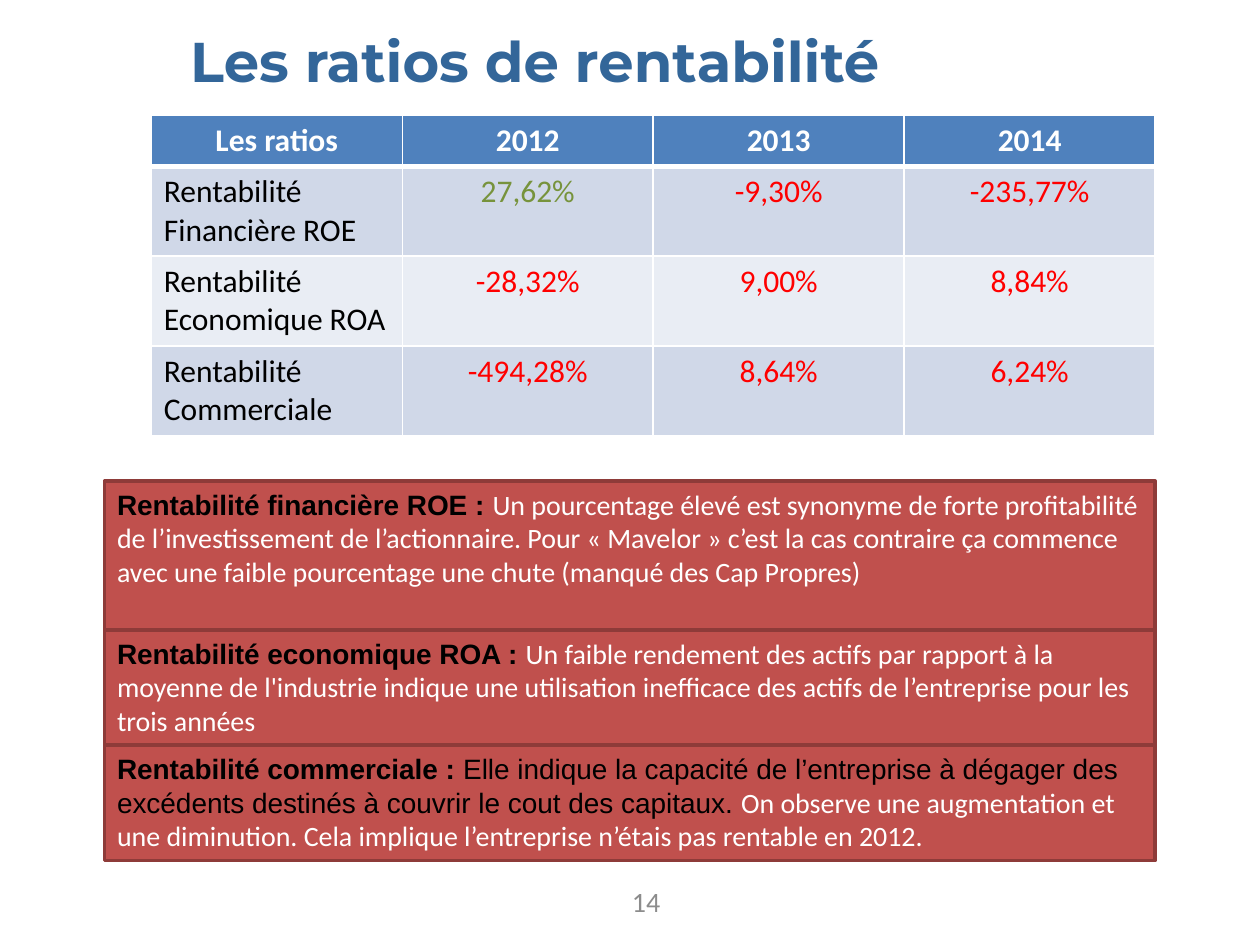
from lxml import etree
from pptx import Presentation
from pptx.dml.color import RGBColor
from pptx.enum.shapes import MSO_SHAPE as Shape
from pptx.enum.text import MSO_ANCHOR as Anchor, MSO_AUTO_SIZE as AutoSize, PP_ALIGN as Align
from pptx.oxml.ns import qn
from pptx.util import Cm, Pt

WHITE = RGBColor(0xFF, 0xFF, 0xFF)
BLACK = RGBColor(0x00, 0x00, 0x00)
TITLE_BLUE = RGBColor(0x33, 0x66, 0x99)
HEADER_BLUE = RGBColor(0x4F, 0x81, 0xBD)
BAND_DARK = RGBColor(0xD0, 0xD8, 0xE8)
BAND_LIGHT = RGBColor(0xE9, 0xED, 0xF4)
GREEN = RGBColor(0x77, 0x93, 0x3C)
RED = RGBColor(0xFF, 0x00, 0x00)
BRICK = RGBColor(0xC0, 0x50, 0x4D)
BRICK_DARK = RGBColor(0x8E, 0x3B, 0x39)
GREY = RGBColor(0x8C, 0x8C, 0x8C)


def write(frame, text, font="Calibri", size=16, color=WHITE, bold=False, align=Align.LEFT):
    """Append a formatted run to the first paragraph of a text frame."""
    paragraph = frame.paragraphs[0]
    paragraph.alignment = align
    run = paragraph.add_run()
    run.text = text
    run.font.name = font
    run.font.size = Pt(size)
    run.font.bold = bold
    run.font.color.rgb = color


def add_borders(cell, widths):
    """Draw white cell borders; widths maps a border tag to its points."""
    properties = cell._tc.get_or_add_tcPr()
    for position, (tag, width) in enumerate(widths.items()):
        border = etree.Element(qn(tag), w=str(Pt(width)))
        fill = etree.SubElement(border, qn("a:solidFill"))
        etree.SubElement(fill, qn("a:srgbClr"), val=str(WHITE))
        properties.insert(position, border)


prs = Presentation()
prs.slide_width, prs.slide_height = Cm(25.4), Cm(19.05)
slide = prs.slides.add_slide(prs.slide_layouts[5])

# Title
title = slide.shapes.title
title.left, title.top, title.width, title.height = Cm(3.58), Cm(0.41), Cm(21.79), Cm(1.63)
title.text_frame.auto_size = AutoSize.NONE
title.text_frame.vertical_anchor = Anchor.TOP
write(title.text_frame, "Les ratios de rentabilité", font="Montserrat", size=32,
      color=TITLE_BLUE, bold=True)

# Ratios by year; rows grow to fit their text
ratios = [
    ("Les ratios", "2012", "2013", "2014"),
    ("Rentabilité Financière ROE", "27,62%", "-9,30%", "-235,77%"),
    ("Rentabilité Economique ROA", "-28,32%", "9,00%", "8,84%"),
    ("Rentabilité Commerciale", "-494,28%", "8,64%", "6,24%"),
]
ratio_table = slide.shapes.add_table(4, 4, Cm(3.05), Cm(2.33), Cm(20.24), Cm(4.12)).table
for r, values in enumerate(ratios):
    for c, value in enumerate(values):
        cell = ratio_table.cell(r, c)
        cell.fill.solid()
        if r == 0:
            cell.fill.fore_color.rgb = HEADER_BLUE
            color = WHITE
        else:
            cell.fill.fore_color.rgb = BAND_DARK if r % 2 else BAND_LIGHT
            color = BLACK if c == 0 else GREEN if (r, c) == (1, 1) else RED
        add_borders(cell, {"a:lnL": 1, "a:lnR": 1, "a:lnT": 3 if r == 1 else 1,
                           "a:lnB": 3 if r == 0 else 1})
        write(cell.text_frame, value, size=18, color=color, bold=r == 0,
              align=Align.LEFT if r and c == 0 else Align.CENTER)

# Comments: heading, definition in black, remark in white
comments = [
    (9.7, 3.0, "Rentabilité financière ROE : ", "",
     "Un pourcentage élevé est synonyme de forte profitabilité de l’investissement de "
     "l’actionnaire. Pour « Mavelor » c’est la cas contraire ça commence avec une faible "
     "pourcentage une chute (manqué des Cap Propres)"),
    (12.7, 2.32, "Rentabilité economique ROA : ", "",
     "Un faible rendement des actifs par rapport à la moyenne de l'industrie indique une "
     "utilisation inefficace des actifs de l’entreprise pour les trois années"),
    (15.03, 2.32, "Rentabilité commerciale : ",
     "Elle indique la capacité de l’entreprise à dégager des excédents destinés à couvrir "
     "le cout des capitaux. ",
     "On observe une augmentation et une diminution. Cela implique l’entreprise n’étais "
     "pas rentable en 2012."),
]
for top, height, heading, definition, remark in comments:
    comment = slide.shapes.add_shape(Shape.RECTANGLE, Cm(2.11), Cm(top), Cm(21.18), Cm(height))
    comment.shadow.inherit = False
    comment.fill.solid()
    comment.fill.fore_color.rgb = BRICK
    comment.line.color.rgb = BRICK_DARK
    comment.line.width = Pt(2)
    frame = comment.text_frame
    frame.word_wrap = True
    frame.vertical_anchor = Anchor.TOP
    write(frame, heading, font="Arial", color=BLACK, bold=True)
    if definition:
        write(frame, definition, font="Arial", color=BLACK)
    write(frame, remark)

# Page number
page_number = slide.shapes.add_textbox(Cm(9.12), Cm(17.72), Cm(8.05), Cm(0.89)).text_frame
page_number.word_wrap = True
page_number.vertical_anchor = Anchor.MIDDLE
page_number.margin_left = Cm(3.62)
write(page_number, "14", color=GREY)

prs.save("out.pptx")
